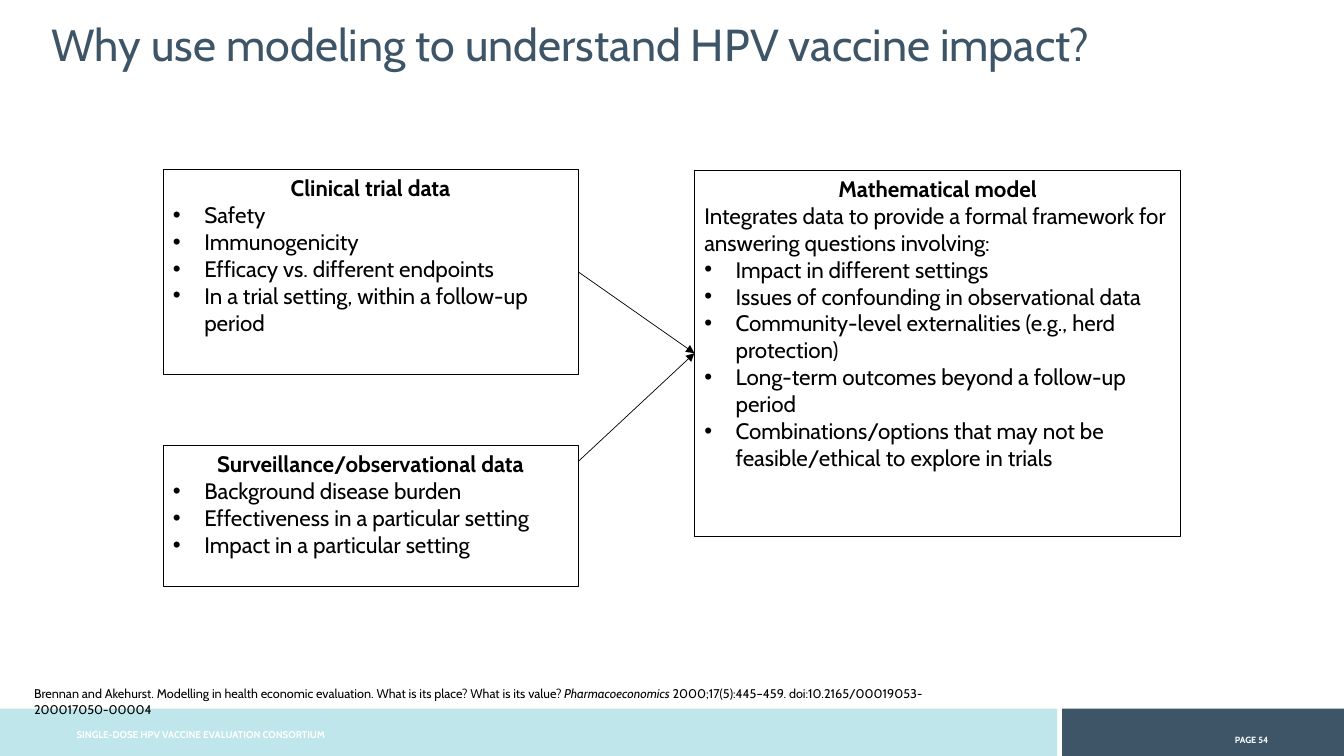
"""Build a slide on why modeling helps to understand HPV vaccine impact."""
from lxml.etree import SubElement
from pptx import Presentation
from pptx.dml.color import RGBColor
from pptx.enum.shapes import MSO_CONNECTOR, MSO_SHAPE
from pptx.enum.text import MSO_ANCHOR, MSO_AUTO_SIZE, PP_ALIGN
from pptx.oxml.ns import qn
from pptx.util import Cm, Pt

COLORS = {"slate": "3D5567", "aqua": "BFE6EA", "black": "000000", "white": "FFFFFF"}
FONT = "Cabin"
SLIDE_SIZE = (33.87, 19.05)
BAR_TOP = 17.86
BULLET_INDENT = 0.79

TITLE = "Why use modeling to understand HPV vaccine impact?"
FOOTER = "SINGLE-DOSE HPV VACCINE EVALUATION CONSORTIUM"
PAGE = "PAGE 54"
CITATION = [
    ("Brennan and Akehurst. Modelling in health economic evaluation. "
     "What is its place? What is its value? ", False),
    ("Pharmacoeconomics", True),
    (" 2000;17(5):445–459. doi:10.2165/00019053-200017050-00004", False),
]
BARS = [(0, 26.64, "aqua"), (26.77, 7.1, "slate")]
BOXES = {
    "trial": {
        "place": (4.11, 4.27, 10.46, 5.16),
        "heading": "Clinical trial data",
        "intro": "",
        "bullets": ["Safety", "Immunogenicity", "Efficacy vs. different endpoints",
                    "In a trial setting, within a follow-up period"],
    },
    "model": {
        "place": (17.5, 4.29, 12.26, 9.22),
        "heading": "Mathematical model",
        "intro": "Integrates data to provide a formal framework for answering "
                 "questions involving:",
        "bullets": ["Impact in different settings",
                    "Issues of confounding in observational data",
                    "Community-level externalities (e.g., herd protection)",
                    "Long-term outcomes beyond a follow-up period",
                    "Combinations/options that may not be feasible/ethical "
                    "to explore in trials"],
    },
    "surveillance": {
        "place": (4.11, 11.23, 10.46, 3.56),
        "heading": "Surveillance/observational data",
        "intro": "",
        "bullets": ["Background disease burden", "Effectiveness in a particular setting",
                    "Impact in a particular setting"],
    },
}
SURVEILLANCE_ARROW_START = (14.57, 11.63)


def color(name):
    return RGBColor.from_string(COLORS[name])


def lengths(values):
    return [Cm(value) for value in values]


def style(paragraph, size, color_name="black", bold=False, align=PP_ALIGN.LEFT):
    paragraph.alignment = align
    font = paragraph.font
    font.name, font.size, font.bold = FONT, Pt(size), bold
    font.color.rgb = color(color_name)


def add_bullet(paragraph):
    properties = paragraph._p.get_or_add_pPr()
    properties.set("marL", str(Cm(BULLET_INDENT)))
    properties.set("indent", str(-Cm(BULLET_INDENT)))
    SubElement(properties, qn("a:buFont")).set("typeface", "Arial")
    SubElement(properties, qn("a:buChar")).set("char", "•")


def add_rectangle(slide, place):
    shape = slide.shapes.add_shape(MSO_SHAPE.RECTANGLE, *lengths(place))
    shape.shadow.inherit = False
    return shape


def add_bar(slide, left, width, color_name):
    bar = add_rectangle(slide, (left, BAR_TOP, width, SLIDE_SIZE[1] - BAR_TOP))
    bar.fill.solid()
    bar.fill.fore_color.rgb = color(color_name)
    bar.line.fill.background()


def add_text(slide, place, runs, anchor=MSO_ANCHOR.TOP):
    frame = slide.shapes.add_textbox(*lengths(place)).text_frame
    frame.word_wrap = True
    frame.vertical_anchor = anchor
    paragraph = frame.paragraphs[0]
    for text, italic in runs:
        run = paragraph.add_run()
        run.text = text
        if italic:
            run.font.italic = True
    return paragraph


def add_box(slide, place, heading, intro, bullets):
    box = add_rectangle(slide, place)
    box.fill.background()
    box.line.color.rgb = color("black")
    box.line.width = Pt(0.75)
    frame = box.text_frame
    frame.word_wrap = True
    frame.vertical_anchor = MSO_ANCHOR.TOP
    frame.paragraphs[0].text = heading
    style(frame.paragraphs[0], 16, bold=True, align=PP_ALIGN.CENTER)
    if intro:
        paragraph = frame.add_paragraph()
        paragraph.text = intro
        style(paragraph, 16)
    for bullet in bullets:
        paragraph = frame.add_paragraph()
        paragraph.text = bullet
        add_bullet(paragraph)
        style(paragraph, 16)
    return box


def add_arrow(slide, start, target):
    arrow = slide.shapes.add_connector(MSO_CONNECTOR.STRAIGHT, *start, *start)
    arrow.end_connect(target, 1)
    arrow.line.color.rgb = color("black")
    arrow.line.width = Pt(0.5)
    SubElement(arrow.line._get_or_add_ln(), qn("a:tailEnd")).set("type", "triangle")
    SubElement(arrow._element.spPr, qn("a:effectLst"))
    return arrow


def main():
    presentation = Presentation()
    presentation.slide_width, presentation.slide_height = lengths(SLIDE_SIZE)
    slide = presentation.slides.add_slide(presentation.slide_layouts[5])

    title = slide.shapes.title
    title.left, title.top, title.width, title.height = lengths((1.04, 0.3, 32.64, 1.63))
    title.text_frame.text = TITLE
    title.text_frame.vertical_anchor = MSO_ANCHOR.TOP
    title.text_frame.auto_size = MSO_AUTO_SIZE.NONE
    style(title.text_frame.paragraphs[0], 32, "slate")

    for bar in BARS:
        add_bar(slide, *bar)
    footer = add_text(slide, (1.68, 18.24, 11.05, 0.56), [(FOOTER, False)],
                      MSO_ANCHOR.MIDDLE)
    style(footer, 7, "white", bold=True)
    page = add_text(slide, (28.12, 18.34, 4.09, 0.56), [(PAGE, False)])
    style(page, 11, "white", bold=True, align=PP_ALIGN.RIGHT)
    page.runs[0]._r.get_or_add_rPr().set("baseline", "30000")

    boxes = {name: add_box(slide, **content) for name, content in BOXES.items()}
    trial_arrow = add_arrow(slide, lengths(SURVEILLANCE_ARROW_START), boxes["model"])
    trial_arrow.begin_connect(boxes["trial"], 3)
    add_arrow(slide, lengths(SURVEILLANCE_ARROW_START), boxes["model"])

    citation = add_text(slide, (0.61, 17.17, 24.74, 0.64), CITATION)
    style(citation, 9)
    presentation.save("out.pptx")


if __name__ == "__main__":
    main()
